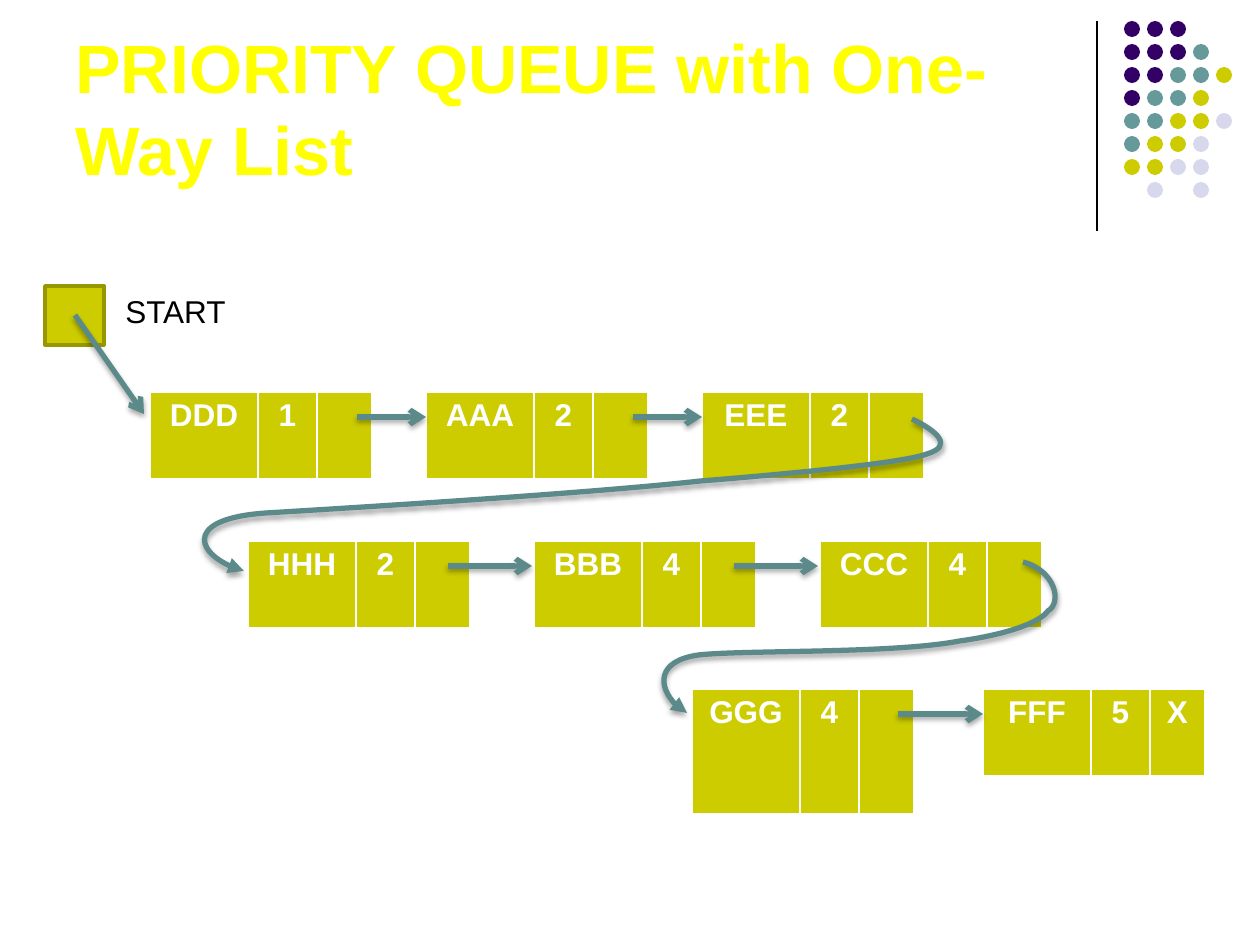
"""Build the slide on a priority queue kept as a one-way list."""
from lxml import etree
from pptx import Presentation
from pptx.dml.color import RGBColor
from pptx.enum.shapes import MSO_CONNECTOR, MSO_SHAPE
from pptx.enum.text import MSO_ANCHOR, PP_ALIGN
from pptx.oxml import parse_xml
from pptx.oxml.ns import nsdecls, qn
from pptx.util import Emu, Pt

STRAIGHT = MSO_CONNECTOR.STRAIGHT
OVAL, RECTANGLE = MSO_SHAPE.OVAL, MSO_SHAPE.RECTANGLE
BOTTOM, CENTER = MSO_ANCHOR.BOTTOM, PP_ALIGN.CENTER
COLORS = {name: RGBColor.from_string(value) for name, value in {
    "purple": "330066", "teal": "669999", "olive": "CCCC00", "mist": "D8D8EC",
    "yellow": "FFFF00", "black": "000000", "white": "FFFFFF",
    "link": "5C8A8A", "edge": "979700"}.items()}
SCALE = 914400 / 126


def px(*lengths):
    return [Emu(round(length * SCALE)) for length in lengths]


def style_link(link, head):
    link.line.color.rgb = COLORS["link"]
    link.line.width = Pt(3)
    etree.SubElement(link.line._get_or_add_ln(), qn("a:tailEnd"), type=head)
    link._element.spPr.append(parse_xml(
        f'<a:effectLst {nsdecls("a")}><a:outerShdw blurRad="39370" dist="22860" '
        'dir="5400000" rotWithShape="0"><a:srgbClr val="000000">'
        '<a:alpha val="35000"/></a:srgbClr></a:outerShdw></a:effectLst>'))


prs = Presentation()
prs.slide_width, prs.slide_height = px(1260, 945)
slide = prs.slides.add_slide(prs.slide_layouts[6])
shapes = slide.shapes

divider = shapes.add_connector(STRAIGHT, *px(1097, 21, 1097, 231))
divider.line.color.rgb = COLORS["black"]
divider.line.width = Pt(0.75)
etree.SubElement(divider._element.spPr, qn("a:effectLst"))

dot_colors = {"p": "purple", "t": "teal", "o": "olive", "m": "mist"}
dot_rows = ["ppp", "pppt", "pptto", "ptto", "ttoom", "toom", "oomm", "-m-m"]
for row, letters in enumerate(dot_rows):
    for column, letter in enumerate(letters):
        if letter in dot_colors:
            dot = shapes.add_shape(OVAL, *px(1124 + 23 * column, 21 + 23 * row, 16, 16))
            dot.shadow.inherit = False
            dot.fill.solid()
            dot.fill.fore_color.rgb = COLORS[dot_colors[letter]]
            dot.line.fill.background()

captions = [
    ("PRIORITY QUEUE with One-Way List", (63, 16, 1040, 179), 39, "yellow", True),
    ("START", (113, 286, 127, 50), 18, "black", False),
]
for words, place, size, color, is_title in captions:
    caption = shapes.add_textbox(*px(*place)).text_frame
    caption.text = words
    caption.word_wrap = is_title
    if is_title:
        caption.vertical_anchor = BOTTOM
    font = caption.paragraphs[0].runs[0].font
    font.name, font.size, font.bold = "Arial", Pt(size), is_title
    font.color.rgb = COLORS[color]

start = shapes.add_shape(RECTANGLE, *px(45, 286, 59, 59))
start.shadow.inherit = False
start.fill.solid()
start.fill.fore_color.rgb = COLORS["olive"]
start.line.color.rgb = COLORS["edge"]
start.line.width = Pt(2)

field_widths = (108, 59, 55)
borders = {"a:lnL": 1, "a:lnR": 1, "a:lnT": 1, "a:lnB": 3}
# Each queue row: top, first left, step, link start, link end, nodes
queue_rows = [
    (392, 150, 276, 207, 276, [("DDD", "1", ""), ("AAA", "2", ""), ("EEE", "2", "")]),
    (541, 248, 286, 200, 284, [("HHH", "2", ""), ("BBB", "4", ""), ("CCC", "4", "")]),
    (689, 692, 291, 206, 291, [("GGG", "4", ""), ("FFF", "5", "X")]),
]
links = [(75, 315, 144, 414)]
for top, first_left, step, link_start, link_end, nodes in queue_rows:
    for position, fields in enumerate(nodes):
        left = first_left + step * position
        height = 126 if fields[0] == "GGG" else 88
        node = shapes.add_table(1, 3, *px(left, top, sum(field_widths), height)).table
        for column, width, cell, value in zip(
                node.columns, field_widths, node.rows[0].cells, fields):
            column.width = px(width)[0]
            cell.text = value
            paragraph = cell.text_frame.paragraphs[0]
            paragraph.alignment = CENTER
            for run in paragraph.runs:
                run.font.name, run.font.size, run.font.bold = "Arial", Pt(18), True
                run.font.color.rgb = COLORS["white"]
            properties = cell._tc.get_or_add_tcPr()
            for side, points in borders.items():
                border = etree.SubElement(properties, qn(side), w=str(Pt(points)))
                paint = etree.SubElement(border, qn("a:solidFill"))
                etree.SubElement(paint, qn("a:srgbClr"), val=str(COLORS["white"]))
            cell.fill.solid()
            cell.fill.fore_color.rgb = COLORS["olive"]
        if position < len(nodes) - 1:
            links.append((left + link_start, top + 25, left + link_end, top + 25))

for ends in links:
    style_link(shapes.add_connector(STRAIGHT, *px(*ends)), "arrow")

row_turns = [
    [(912, 419), (937, 431), (954, 446), (927, 454), (896, 466), (701, 481),
     (701, 481), (583, 494), (348, 508), (267, 513), (188, 518), (194, 557), (244, 571)],
    [(1023, 562), (1056, 571), (1062, 603), (1048, 611), (1032, 632), (960, 641),
     (960, 641), (893, 654), (745, 650), (699, 655), (655, 661), (659, 699), (687, 713)],
]
for points in row_turns:
    outline = shapes.build_freeform(*points[0], scale=SCALE)
    outline.add_line_segments(points[1:], close=False)
    turn = outline.convert_to_shape()
    turn.fill.background()
    style_link(turn, "triangle")
    path = next(turn._element.iter(qn("a:path")))
    segments = path.findall(qn("a:lnTo"))
    for first in range(0, len(segments), 3):
        curve = etree.SubElement(path, qn("a:cubicBezTo"))
        for segment in segments[first:first + 3]:
            curve.append(segment[0])
            path.remove(segment)

prs.save("out.pptx")
